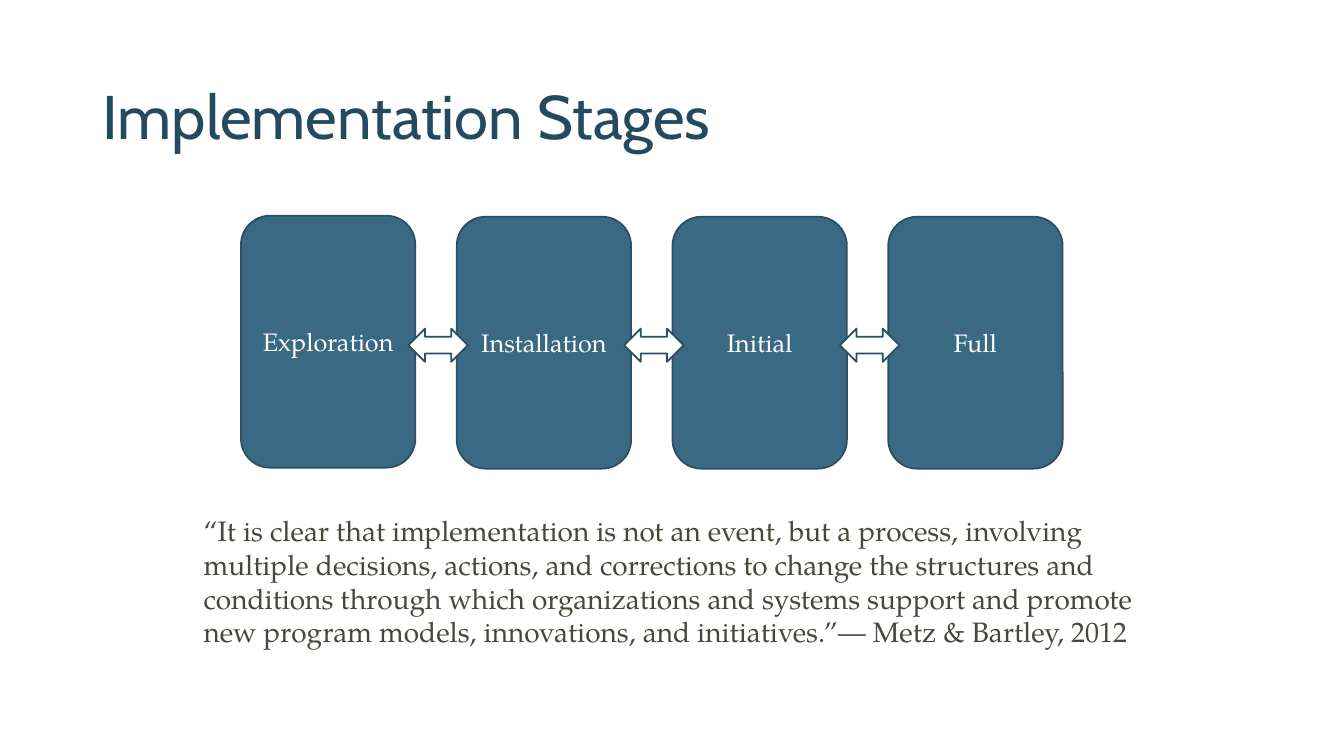
from pptx import Presentation
from pptx.dml.color import RGBColor
from pptx.enum import shapes, text
from pptx.util import Inches, Pt

NAVY = RGBColor(0x24, 0x4A, 0x5F)
BLUE = RGBColor(0x3A, 0x69, 0x83)
OUTLINE = RGBColor(0x2B, 0x4E, 0x61)
BROWN = RGBColor(0x49, 0x47, 0x3B)
WHITE = RGBColor(0xFF, 0xFF, 0xFF)
BODY_FONT = "TeX Gyre Pagella"
STAGES = ["Exploration", "Installation", "Initial", "Full"]
STAGE_LEFT, STAGE_STEP = 2.39, 2.14
ARROW_LEFT = 4.05
QUOTE = (
    "“It is clear that implementation is not an event, but a process, involving "
    "multiple decisions, actions, and corrections to change the structures and "
    "conditions through which organizations and systems support and promote "
    "new program models, innovations, and initiatives.”— Metz & Bartley, 2012"
)


def add_outlined(kind, left, top, width, height, color):
    shape = page.shapes.add_shape(
        kind, Inches(left), Inches(top), Inches(width), Inches(height))
    shape.shadow.inherit = False
    shape.fill.solid()
    shape.fill.fore_color.rgb = color
    shape.line.color.rgb = OUTLINE
    shape.line.width = Pt(1.25)
    return shape


def write(shape, words, name, size, color, anchor, align):
    frame = shape.text_frame
    frame.word_wrap = True
    frame.vertical_anchor = anchor
    para = frame.paragraphs[0]
    para.text = words
    para.alignment = align
    para.font.name = name
    para.font.size = Pt(size)
    para.font.color.rgb = color
    return para


deck = Presentation()
deck.slide_width, deck.slide_height = Inches(13.33), Inches(7.5)
page = deck.slides.add_slide(deck.slide_layouts[6])

title = page.shapes.add_textbox(Inches(0.92), Inches(0.46), Inches(11.5), Inches(1.45))
heading = write(title, "Implementation Stages", "Cabin", 44, NAVY,
                text.MSO_ANCHOR.MIDDLE, text.PP_ALIGN.LEFT)
heading.line_spacing = 0.9

for index, stage in enumerate(STAGES):
    top = 2.14 if index == 0 else 2.15
    box = add_outlined(shapes.MSO_SHAPE.ROUNDED_RECTANGLE,
                       STAGE_LEFT + index * STAGE_STEP, top, 1.73, 2.5, BLUE)
    write(box, stage, BODY_FONT, 18, WHITE,
          text.MSO_ANCHOR.MIDDLE, text.PP_ALIGN.CENTER)

for index in range(len(STAGES) - 1):
    add_outlined(shapes.MSO_SHAPE.LEFT_RIGHT_ARROW,
                 ARROW_LEFT + index * STAGE_STEP, 3.26, 0.59, 0.33, WHITE)

quote = page.shapes.add_textbox(Inches(1.92), Inches(5.05), Inches(9.72), Inches(1.44))
quote.fill.solid()
quote.fill.fore_color.rgb = WHITE
write(quote, QUOTE, BODY_FONT, 20, BROWN, text.MSO_ANCHOR.TOP, text.PP_ALIGN.LEFT)
quote.text_frame.auto_size = text.MSO_AUTO_SIZE.SHAPE_TO_FIT_TEXT

deck.save("out.pptx")
